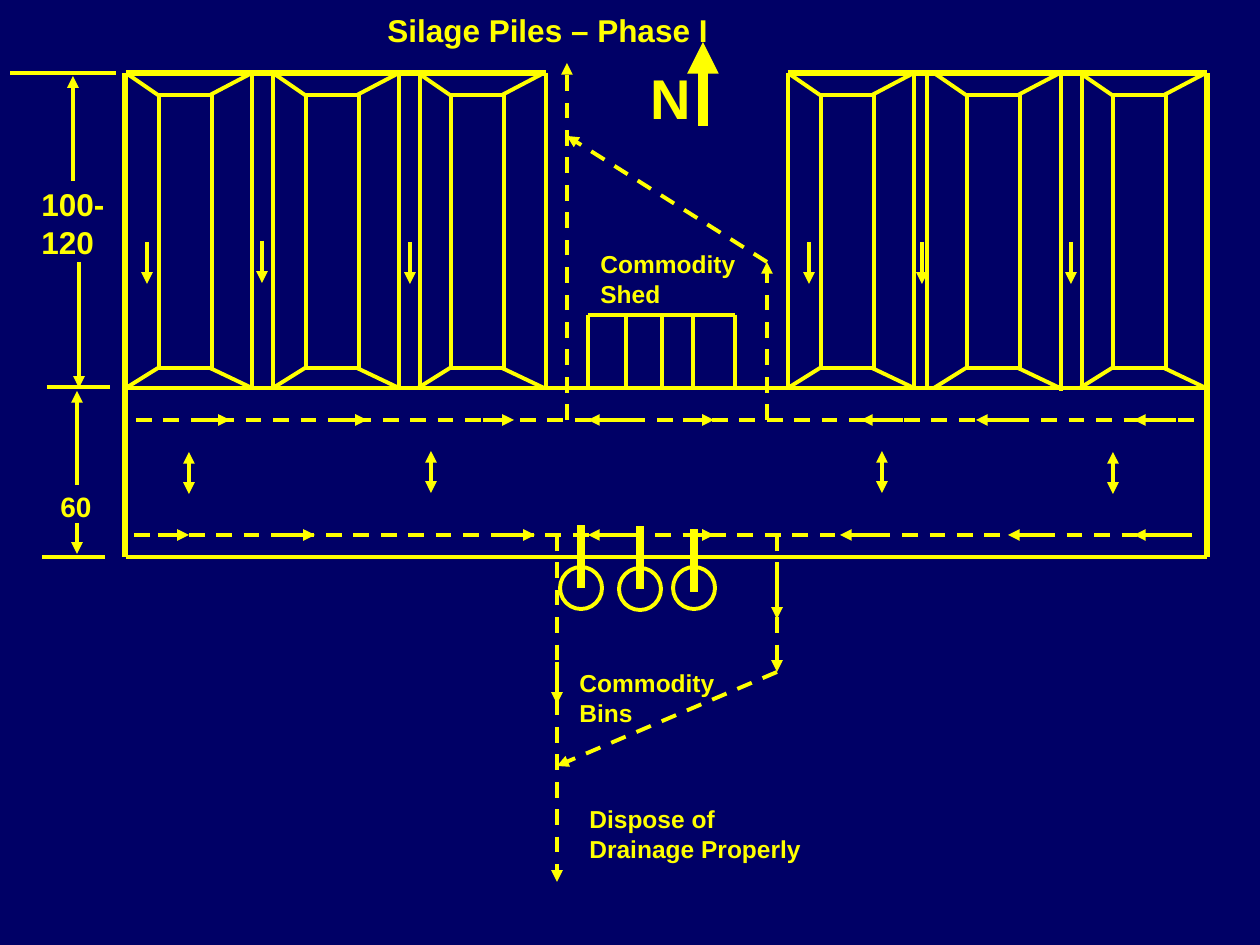
from dataclasses import dataclass

from lxml import etree
from pptx import Presentation
from pptx import util as u
from pptx.dml.color import RGBColor
from pptx.enum import dml, shapes, text
from pptx.oxml.ns import qn


@dataclass(frozen=True)
class Theme:
    ground: RGBColor = RGBColor(0x00, 0x00, 0x66)
    ink: RGBColor = RGBColor(0xFF, 0xFF, 0x00)
    font: str = "Arial"
    label: int = 14
    width: int = 16
    title: int = 18
    compass: int = 32
    thin: float = 2.25
    edge: float = 3
    pipe: float = 4.5
    north: float = 6


THEME = Theme()
PX = u.Inches(1) // 126

# Levels of the yard, from north to south
TOP, FLOOR, APRON = 73, 388, 557
UPPER_DRAIN, LOWER_DRAIN = 420, 535
WEST, EAST = 126, 1207

# Content: text, left, top, width, height, format
LABELS = [
    ("Silage Piles – Phase I", 375, 5, 352, 50, dict(size=THEME.title)),
    ("N", 638, 57, 66, 79, dict(size=THEME.compass)),
    ("100-\n120", 29, 179, 88, 88, dict(size=THEME.title)),
    ("60", 48, 483, 57, 47, dict(size=THEME.width)),
    ("Commodity\nShed", 588, 243, 160, 72, {}),
    ("Commodity\nBins", 567, 662, 160, 72, {}),
    ("Dispose of\nDrainage Properly", 577, 798, 273, 72, dict(wrap=True)),
]

# Silage piles: left edges of the sloped floors, walls between them
PILES = [126, 273, 418, 788, 934, 1080]
WALLS = [252, 273, 399, 420, 546, 788, 914, 927, 1082]
CORE_INSET, CORE_TOP, CORE_WIDTH, CORE_BOTTOM = 33, 95, 53, 368

# Commodity shed and bins
SHED_LEFT, SHED_TOP, SHED_RIGHT = 588, 315, 735
SHED_WALLS = [SHED_LEFT, 626, 662, 693, SHED_RIGHT]
BIN_SIZE = 42
BINS = [(581, 588), (640, 589), (694, 592)]  # pipe x, pipe foot
BIN_TOPS = [567, 568, 567]
PIPE_LENGTH = 63

# Outline: x1, y1, x2, y2, weight
OUTLINE = [
    (WEST, FLOOR, EAST, FLOOR, THEME.thin),
    (WEST, APRON, EAST, APRON, THEME.thin),
    (WEST, TOP, 546, TOP, THEME.edge),
    (788, TOP, EAST, TOP, THEME.edge),
    (125, TOP, 125, APRON, THEME.edge),
    (EAST, TOP, EAST, APRON, THEME.edge),
    (1061, 76, 1061, 391, THEME.thin),
]

# Dimension ticks and arrows: x1, y1, x2, y2
TICKS = [(116, 73, 10, 73), (47, 387, 110, 387), (42, 557, 105, 557)]
DIMENSIONS = [(73, 181, 73, 76), (79, 262, 79, 388),
              (77, 485, 77, 391), (77, 523, 77, 554)]

# Drainage routes, dashed
DRAINS = [(136, UPPER_DRAIN, 1197, UPPER_DRAIN),
          (134, LOWER_DRAIN, 1194, LOWER_DRAIN)]
ROUTES = [
    (567, UPPER_DRAIN, 567, 63),
    (557, LOWER_DRAIN, 557, 882),
    (767, UPPER_DRAIN, 767, 262),
    (767, 262, 567, 136),
    (777, LOWER_DRAIN, 777, 672),
    (777, 672, 557, 766),
]

# Flow arrows along each drain: start x of eastward and westward ones
FLOWS = {
    UPPER_DRAIN: dict(east=[199, 336, 483, 683], west=[630, 903, 1018, 1176]),
    LOWER_DRAIN: dict(east=[158, 284, 504, 683], west=[630, 882, 1050, 1176]),
}
EAST_LENGTH, FLOW_LENGTH = 31, 42
DOWNWARD = [(147, 242), (262, 241), (410, 242), (809, 242), (922, 242),
            (1071, 242), (557, 662), (777, 577)]
TWO_WAY = [(189, 494), (431, 493), (882, 493), (1113, 494)]

deck = Presentation()
deck.slide_width, deck.slide_height = 1260 * PX, 945 * PX
page = deck.slides.add_slide(deck.slide_layouts[6])
page.background.fill.solid()
page.background.fill.fore_color.rgb = THEME.ground


def add_line(x1, y1, x2, y2, weight=THEME.thin, dash=False, arrows=()):
    line = page.shapes.add_connector(
        shapes.MSO_CONNECTOR.STRAIGHT, x1 * PX, y1 * PX, x2 * PX, y2 * PX)
    line.line.color.rgb = THEME.ink
    line.line.width = u.Pt(weight)
    if dash:
        line.line.dash_style = dml.MSO_LINE.DASH
    properties = line._element.spPr
    for end in arrows:
        etree.SubElement(properties.find(qn("a:ln")), qn(f"a:{end}"), type="triangle")
    etree.SubElement(properties, qn("a:effectLst"))


def add_outline(kind, left, top, width, height):
    shape = page.shapes.add_shape(kind, left * PX, top * PX, width * PX, height * PX)
    shape.shadow.inherit = False
    shape.fill.background()
    shape.line.color.rgb = THEME.ink
    shape.line.width = u.Pt(THEME.thin)


def add_text(words, left, top, width, height, size=THEME.label, wrap=False):
    box = page.shapes.add_textbox(left * PX, top * PX, width * PX, height * PX)
    frame = box.text_frame
    frame.word_wrap = wrap
    frame.auto_size = text.MSO_AUTO_SIZE.SHAPE_TO_FIT_TEXT
    for index, words_line in enumerate(words.split("\n")):
        para = frame.paragraphs[0] if index == 0 else frame.add_paragraph()
        span = para.add_run()
        span.text = words_line
        span.font.name, span.font.size, span.font.bold = THEME.font, u.Pt(size), True
        span.font.color.rgb = THEME.ink


# Yard outline and walls
for *ends, weight in OUTLINE:
    add_line(*ends, weight=weight)
for x in WALLS:
    add_line(x, TOP, x, FLOOR)

# Piles: a core with four sloped corners
for left in PILES:
    add_outline(shapes.MSO_SHAPE.RECTANGLE, left + CORE_INSET, CORE_TOP,
                CORE_WIDTH, CORE_BOTTOM - CORE_TOP)
    for rim, core in [(TOP, CORE_TOP), (FLOOR, CORE_BOTTOM)]:
        add_line(left, rim, left + 32, core)
        add_line(left + 84, core, left + 126, rim)

# Shed
add_line(SHED_LEFT, SHED_TOP, SHED_RIGHT, SHED_TOP)
for x in SHED_WALLS:
    add_line(x, SHED_TOP, x, FLOOR)

# Bins with their pipes
for (x, foot), top in zip(BINS, BIN_TOPS):
    add_outline(shapes.MSO_SHAPE.OVAL, x - BIN_SIZE // 2, top, BIN_SIZE, BIN_SIZE)
    add_line(x, foot, x, foot - PIPE_LENGTH, weight=THEME.pipe)

# Dimensions and compass
for ends in TICKS:
    add_line(*ends)
for ends in DIMENSIONS:
    add_line(*ends, arrows=["tailEnd"])
add_line(703, 126, 703, 42, weight=THEME.north, arrows=["tailEnd"])

# Drainage
for ends in DRAINS:
    add_line(*ends, dash=True)
for ends in ROUTES:
    add_line(*ends, dash=True, arrows=["tailEnd"])
for y, starts in FLOWS.items():
    for x in starts["east"]:
        add_line(x, y, x + EAST_LENGTH, y, arrows=["tailEnd"])
    for x in starts["west"]:
        add_line(x, y, x - FLOW_LENGTH, y, arrows=["tailEnd"])
for x, y in DOWNWARD:
    add_line(x, y, x, y + FLOW_LENGTH, arrows=["tailEnd"])
for x, y in TWO_WAY:
    add_line(x, y, x, y - FLOW_LENGTH, arrows=["headEnd", "tailEnd"])

# Labels
for words, left, top, width, height, style in LABELS:
    add_text(words, left, top, width, height, **style)

deck.save("out.pptx")
